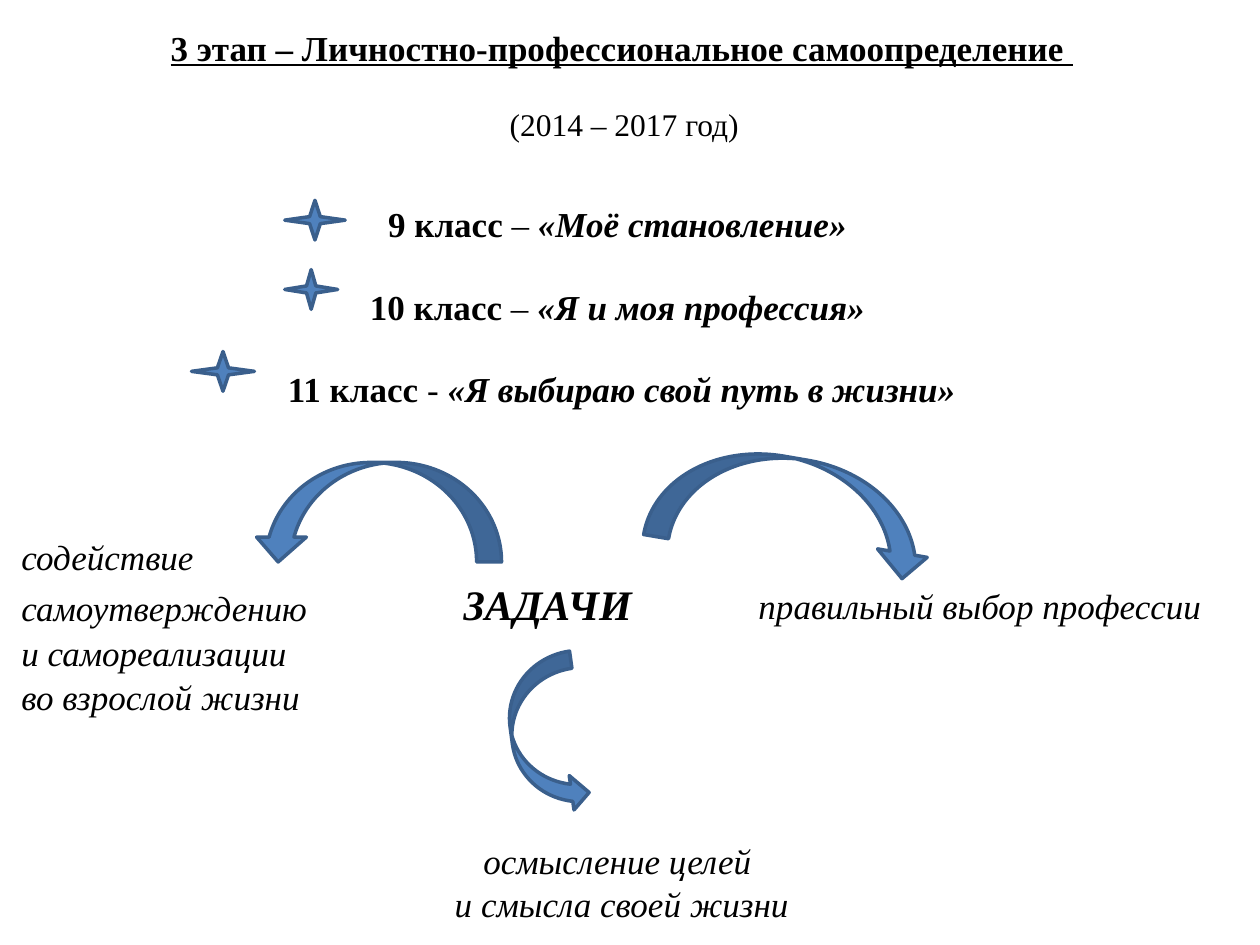
import pptx
import pptx.util
import pptx.dml.color
import pptx.enum.shapes
import pptx.enum.text
import pptx.oxml.ns
import lxml.etree

BLACK = pptx.dml.color.RGBColor(0x00, 0x00, 0x00)
BLUE = pptx.dml.color.RGBColor(0x4F, 0x81, 0xBD)
NAVY = pptx.dml.color.RGBColor(0x3A, 0x5F, 0x8C)
FONT = "Times New Roman"
COLS, ROWS = 100, 75
KIND = pptx.enum.shapes.MSO_SHAPE
ALIGN = pptx.enum.text.PP_ALIGN


class Deck:
    def __init__(self):
        self.show = pptx.Presentation()
        self.show.slide_width = pptx.util.Inches(10)
        self.show.slide_height = pptx.util.Inches(7.5)
        self.col = self.show.slide_width / COLS
        self.row = self.show.slide_height / ROWS
        self.slide = self.show.slides.add_slide(self.show.slide_layouts[1])

    def place(self, left, top, width, height):
        return [round(left * self.col), round(top * self.row),
                round(width * self.col), round(height * self.row)]

    def letter(self, box, lines, size, align, gaps):
        frame = box.text_frame
        frame.word_wrap = True
        frame.auto_size = pptx.enum.text.MSO_AUTO_SIZE.NONE
        frame.vertical_anchor = pptx.enum.text.MSO_ANCHOR.TOP
        frame.margin_left = frame.margin_right = 0
        frame.margin_top = frame.margin_bottom = 0
        for at, runs in enumerate(lines):
            para = frame.paragraphs[0] if at == 0 else frame.add_paragraph()
            props = para._p.get_or_add_pPr()
            props.set("marL", "0")
            props.set("indent", "0")
            lxml.etree.SubElement(props, pptx.oxml.ns.qn("a:buNone"))
            para.alignment = align
            para.space_before = pptx.util.Pt(0)
            para.space_after = pptx.util.Pt(gaps[at] if at < len(gaps) else 0)
            for text, style in runs:
                run = para.add_run()
                run.text = text
                font = run.font
                font.name = FONT
                font.size = pptx.util.Pt(size)
                font.color.rgb = BLACK
                font.bold = "b" in style
                font.italic = "i" in style
                font.underline = "u" in style

    def holder(self, index, area, lines, size, gaps=()):
        box = self.slide.placeholders[index]
        box.left, box.top, box.width, box.height = self.place(*area)
        self.letter(box, lines, size, ALIGN.CENTER, gaps)

    def text(self, area, lines, size=20, align=ALIGN.LEFT, gaps=()):
        box = self.slide.shapes.add_textbox(*self.place(*area))
        self.letter(box, lines, size, align, gaps)

    def shape(self, kind, area, turn=0):
        item = self.slide.shapes.add_shape(kind, *self.place(*area))
        item.shadow.inherit = False
        item.rotation = turn
        item.fill.solid()
        item.fill.fore_color.rgb = BLUE
        item.line.color.rgb = NAVY
        item.line.width = pptx.util.Pt(2)


def main():
    deck = Deck()
    deck.holder(0, (0.7, 2.1, 97.3, 4), [
        [("3 этап – Личностно-профессиональное самоопределение ", "bu")]], 20)
    deck.text((0.9, 8.3, 97.3, 4), [[("(2014 – 2017 год)", "")]], 18, ALIGN.CENTER)

    grades = [("9 класс", " – ", "«Моё становление» "),
              ("10 класс", " – ", "«Я и моя профессия» "),
              ("11 класс", " - ", "«Я выбираю свой путь в жизни»")]
    deck.holder(1, (0.7, 16.1, 97.3, 17),
                [[(grade, "b"), (dash, ""), (theme, "bi")]
                 for grade, dash, theme in grades], 20, (23, 23))

    deck.text((1.7, 42.5, 28, 15), [[(line, "i")] for line in (
        "содействие", "самоутверждению", "и самореализации",
        "во взрослой жизни")], gaps=(5, 2, 1))
    deck.text((36.8, 45.9, 18, 5), [[("ЗАДАЧИ", "bi")]], 24)
    deck.text((60.2, 46.4, 38, 4), [[("правильный выбор профессии", "i")]])
    deck.text((0.7, 66.6, 97.3, 8), [[(line, "i")] for line in (
        "осмысление целей ", "и смысла своей жизни")],
        align=ALIGN.CENTER, gaps=(1,))

    for left, top, width in ((22.6, 15.9, 4.8), (22.6, 21.4, 4.2), (15.2, 27.9, 5)):
        deck.shape(KIND.STAR_4_POINT, (left, top, width, 3.15))
    deck.shape(KIND.CURVED_DOWN_ARROW, (51.6, 36.4, 22.8, 8), 9.7)
    deck.shape(KIND.CURVED_RIGHT_ARROW, (40.6, 52, 5.5, 12.7), 352.1)
    deck.shape(KIND.CURVED_UP_ARROW, (20.1, 36.7, 19.7, 7.9), 180)
    deck.show.save("out.pptx")


if __name__ == "__main__":
    main()
